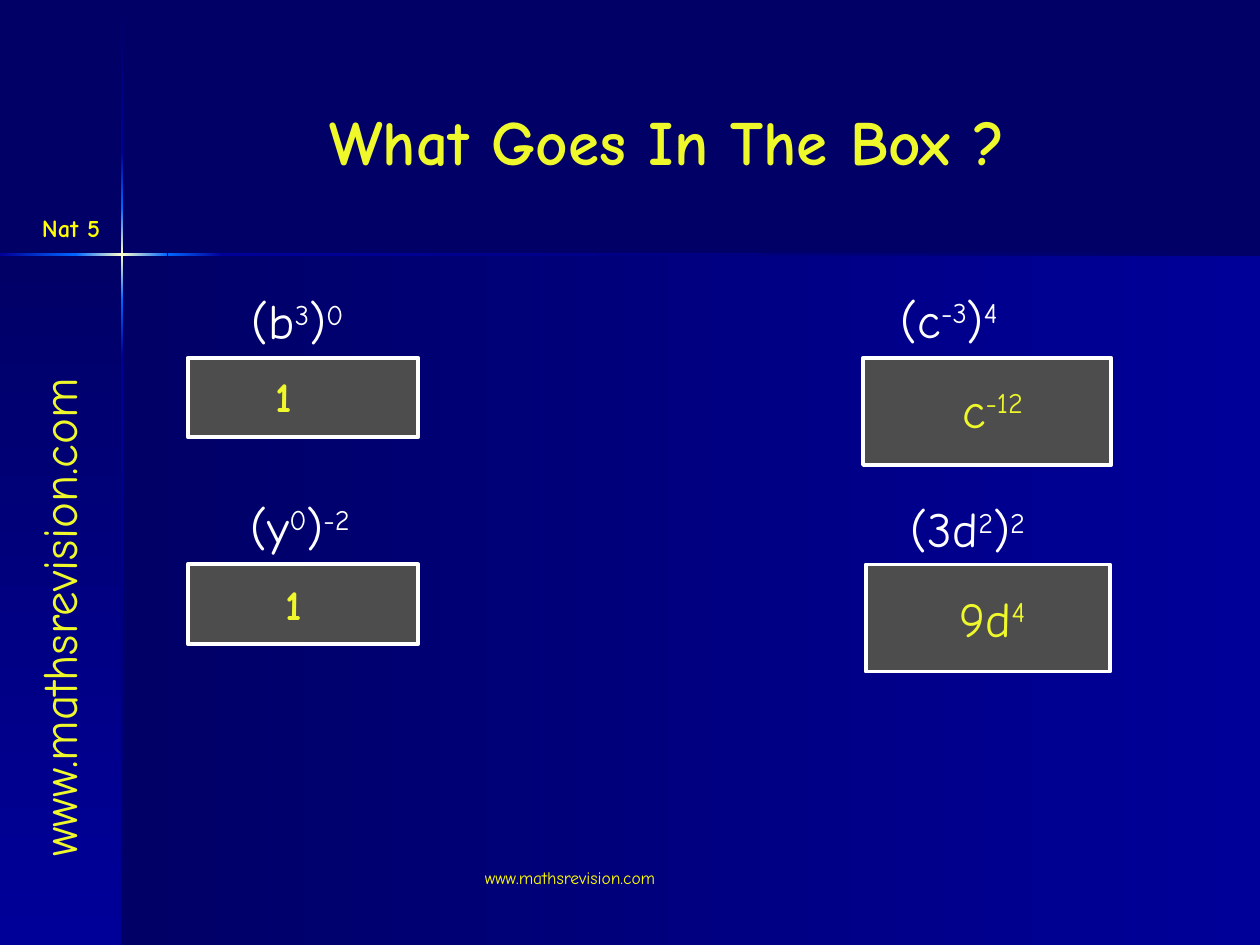
import copy

import pptx
import pptx.dml.color
import pptx.enum.shapes
import pptx.enum.text
import pptx.util

Inches = pptx.util.Inches
Align = pptx.enum.text.PP_ALIGN
FONT = "Comic Neue"
COLORS = {
    "navy": "000066",
    "blue": "000099",
    "bright": "0066FF",
    "cream": "FFFFCC",
    "lime": "EEF82A",
    "yellow": "FFFF00",
    "white": "FFFFFF",
    "grey": "4D4D4D",
}
SITE = "www.mathsrevision.com"


def rgb(name):
    """Return the named palette colour."""
    return pptx.dml.color.RGBColor.from_string(COLORS[name])


def add_rect(slide, box):
    """Add a rectangle without shadow or outline at a box in inches."""
    kind = pptx.enum.shapes.MSO_SHAPE.RECTANGLE
    sp = slide.shapes.add_shape(kind, *map(Inches, box))
    sp.shadow.inherit = False
    sp.line.fill.background()
    return sp


def add_gradient(slide, box, names, down=False):
    """Add a rectangle with evenly spaced colour stops."""
    sp = add_rect(slide, box)
    sp.fill.gradient()
    sp.fill.gradient_angle = 270 if down else 0
    stop_list = sp._element.spPr.find(".//" + pptx.oxml.ns.qn("a:gsLst"))
    for _ in names[2:]:
        stop_list.append(copy.deepcopy(stop_list[-1]))
    for i, (stop, name) in enumerate(zip(sp.fill.gradient_stops, names)):
        stop.position = i / (len(names) - 1)
        stop.color.rgb = rgb(name)


def write(tf, text, size, color, bold=False, align=Align.LEFT):
    """Write one paragraph, raising the parts between carets."""
    p = tf.paragraphs[0]
    p.alignment = align
    for i, part in enumerate(text.split("^")):
        if not part:
            continue
        r = p.add_run()
        r.text = part
        r.font.name = FONT
        r.font.size = pptx.util.Pt(size)
        r.font.bold = bold
        r.font.color.rgb = rgb(color)
        if i % 2:
            r._r.get_or_add_rPr().set("baseline", "30000")


def add_text(slide, box, text, size, color, wrap=True, **style):
    """Add a text box at a box in inches."""
    sp = slide.shapes.add_textbox(*map(Inches, box))
    sp.text_frame.word_wrap = wrap
    write(sp.text_frame, text, size, color, **style)
    return sp


def add_backdrop(slide, width, height):
    """Paint the background, both panels and the glowing cross."""
    slide.background.fill.solid()
    slide.background.fill.fore_color.rgb = rgb("navy")
    x, y, thick = 0.97, 2.02, 0.02
    add_gradient(slide, (x, y, width - x, height - y), ["navy", "blue"])
    add_gradient(slide, (0, y, x, height - y), ["navy", "blue"], True)
    glow = [
        ["navy", "blue"],
        ["blue", "bright"],
        ["bright", "cream", "bright"],
        ["bright", "blue"],
        ["blue", "navy"],
    ]
    rows = [0.01, 1.21, 1.65, 2.38, 2.82, height]
    for top, bottom, names in zip(rows, rows[1:], glow):
        add_gradient(slide, (x - thick / 2, top, thick, bottom - top), names, True)
    columns = [0, 0.6, 1.33, 1.77, width]
    for left, right, names in zip(columns, columns[1:], glow[1:]):
        add_gradient(slide, (left, y - thick / 2, right - left, thick), names)


def add_labels(slide):
    """Add the title, course label and both site addresses."""
    title = slide.shapes.title
    title.left, title.top = Inches(1.17), Inches(0.33)
    title.width, title.height = Inches(8.25), Inches(1.57)
    title.text_frame.vertical_anchor = pptx.enum.text.MSO_ANCHOR.MIDDLE
    write(title.text_frame, "What Goes In The Box ?", 36, "lime", True, Align.CENTER)
    side = add_text(slide, (-1.74, 4.41, 4.4, 0.57), SITE, 28, "lime", wrap=False)
    side.rotation = 270
    add_text(slide, (3.75, 6.83, 3.17, 0.5), SITE, 10, "yellow")
    add_text(slide, (0.18, 1.64, 0.77, 0.34), "Nat 5", 14, "yellow",
             wrap=False, bold=True, align=Align.CENTER)


def add_question(slide, box, question, question_box, answer, answer_box, **style):
    """Add an answer panel with its question and answer offset from its corner."""
    left, top = box[:2]
    sp = add_rect(slide, box)
    sp.fill.solid()
    sp.fill.fore_color.rgb = rgb("grey")
    sp.line.color.rgb = rgb("white")
    sp.line.width = pptx.util.Pt(2.25)
    dx, dy, width = question_box
    add_text(slide, (left + dx, top + dy, width, 0.57), question, 28, "white")
    dx, dy, width = answer_box
    size = 24 if style.get("bold") else 28
    add_text(slide, (left + dx, top + dy, width, 0.57), answer, size, "lime", **style)


def main():
    """Build and save the slide."""
    prs = pptx.Presentation()
    prs.slide_width, prs.slide_height = Inches(10), Inches(7.5)
    slide = prs.slides.add_slide(prs.slide_layouts[5])
    add_backdrop(slide, 10, 7.5)
    add_labels(slide)
    add_question(slide, (1.49, 2.84, 1.83, 0.63), "(b^3^)^0^", (0.41, -0.58, 1.14),
                 "1", (0.6, 0.05, 0.71), bold=True)
    add_question(slide, (1.49, 4.48, 1.83, 0.63), "(y^0^)^-2^", (0.4, -0.59, 1.14),
                 "1 ", (0.12, 0.06, 1.57), bold=True, align=Align.CENTER)
    add_question(slide, (6.85, 2.84, 1.97, 0.85), "(c^-3^)^4^", (0.2, -0.59, 1.34),
                 "c^-12 ^", (0.28, 0.12, 1.57), align=Align.CENTER)
    add_question(slide, (6.87, 4.48, 1.94, 0.85), "(3d^2^)^2^", (0.26, -0.57, 1.34),
                 "9d^4 ^", (0.26, 0.14, 1.57), align=Align.CENTER)
    prs.save("out.pptx")


if __name__ == "__main__":
    main()
